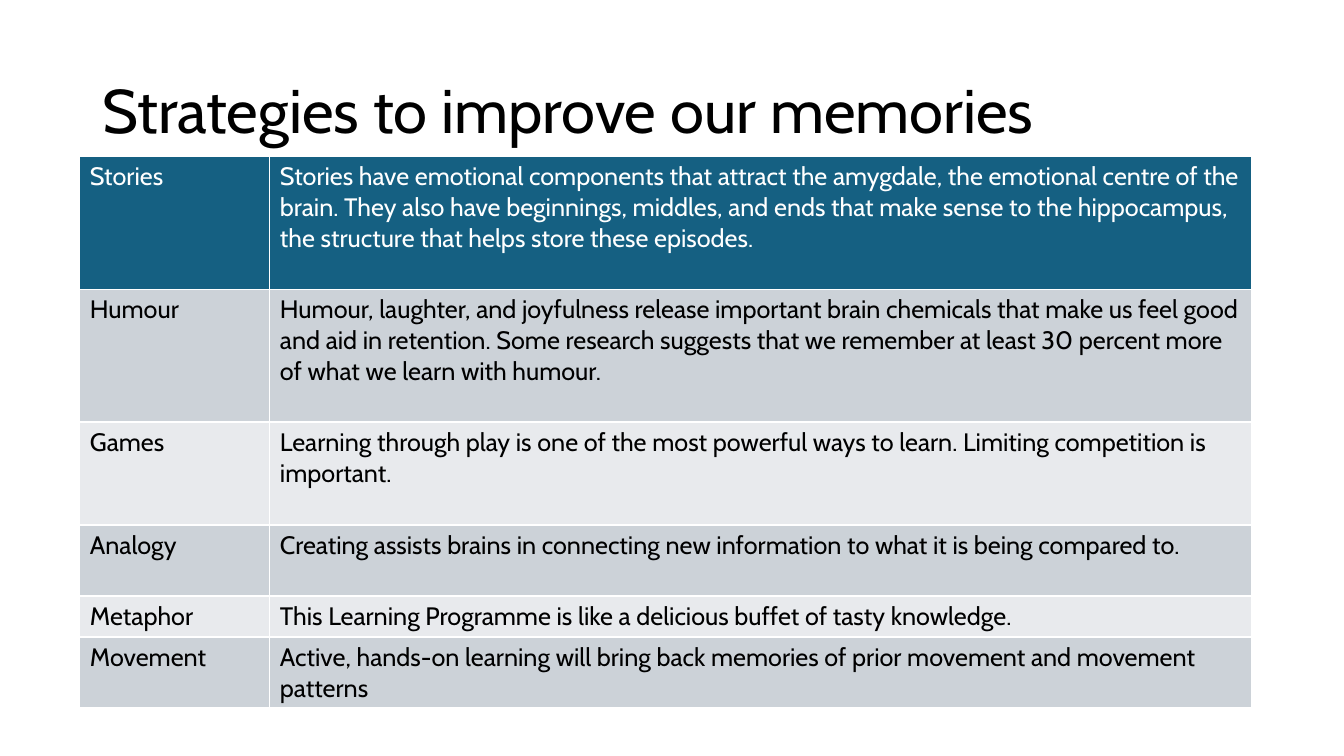
from lxml.etree import SubElement
from pptx import Presentation
from pptx.dml.color import RGBColor
from pptx.enum.text import MSO_ANCHOR
from pptx.oxml.ns import qn
from pptx.util import Pt

WHITE = RGBColor(0xFF, 0xFF, 0xFF)
BLACK = RGBColor(0x00, 0x00, 0x00)
HEADER_BLUE = RGBColor(0x15, 0x60, 0x82)
BAND_DARK = RGBColor(0xCC, 0xD2, 0xD8)
BAND_LIGHT = RGBColor(0xE8, 0xEA, 0xED)

# Strategy, explanation, row height in points
STRATEGIES = [
    ("Stories",
     "Stories have emotional components that attract the amygdale, the emotional "
     "centre of the brain. They also have beginnings, middles, and ends that make "
     "sense to the hippocampus, the structure that helps store these episodes.", 95),
    ("Humour",
     "Humour, laughter, and joyfulness release important brain chemicals that make "
     "us feel good and aid in retention. Some research suggests that we remember at "
     "least 30 percent more of what we learn with humour.", 94.6),
    ("Games",
     "Learning through play is one of the most powerful ways to learn. Limiting "
     "competition is important.", 73.6),
    ("Analogy",
     "Creating assists brains in connecting new information to what it is being "
     "compared to.", 50.8),
    ("Metaphor",
     "This Learning Programme is like a delicious buffet of tasty knowledge.", 29.2),
    ("Movement",
     "Active, hands-on learning will bring back memories of prior movement and "
     "movement patterns", 50.8),
]


class SlideBuilder:
    font_name = "Cabin"
    title_size = 44
    body_size = 18

    def __init__(self, slide):
        self.slide = slide

    def format_text(self, paragraph, size, color):
        for run in paragraph.runs:
            run.font.name = self.font_name
            run.font.size = Pt(size)
            run.font.color.rgb = color

    def add_title(self, text, left, top, width, height):
        shape = self.slide.shapes.add_textbox(Pt(left), Pt(top), Pt(width), Pt(height))
        text_frame = shape.text_frame
        text_frame.word_wrap = True
        text_frame.vertical_anchor = MSO_ANCHOR.MIDDLE
        text_frame.text = text
        paragraph = text_frame.paragraphs[0]
        paragraph.line_spacing = 0.9
        self.format_text(paragraph, self.title_size, BLACK)

    def add_borders(self, cell):
        properties = cell._tc.get_or_add_tcPr()
        # Borders must come before the fill in the cell properties
        for index, side in enumerate(("a:lnL", "a:lnR", "a:lnT", "a:lnB")):
            line = SubElement(properties, qn(side), w=str(Pt(1)))
            fill = SubElement(line, qn("a:solidFill"))
            SubElement(fill, qn("a:srgbClr"), val=str(WHITE))
            properties.insert(index, line)

    def fill_cell(self, cell, text, fill_color, text_color):
        cell.text_frame.text = text
        self.format_text(cell.text_frame.paragraphs[0], self.body_size, text_color)
        cell.fill.solid()
        cell.fill.fore_color.rgb = fill_color
        self.add_borders(cell)

    def add_strategy_table(self, strategies, left, top, column_widths):
        total_height = sum(height for _, _, height in strategies)
        table = self.slide.shapes.add_table(
            len(strategies), len(column_widths), Pt(left), Pt(top),
            Pt(sum(column_widths)), Pt(total_height)).table
        for column, width in zip(table.columns, column_widths):
            column.width = Pt(width)
        for index, (name, explanation, height) in enumerate(strategies):
            table.rows[index].height = Pt(height)
            if index == 0:
                colors = HEADER_BLUE, WHITE
            else:
                colors = (BAND_DARK if index % 2 else BAND_LIGHT), BLACK
            for cell, text in zip(table.rows[index].cells, (name, explanation)):
                self.fill_cell(cell, text, *colors)


def main():
    presentation = Presentation()
    presentation.slide_width = Pt(960)
    presentation.slide_height = Pt(540)
    builder = SlideBuilder(presentation.slides.add_slide(presentation.slide_layouts[6]))

    # Title
    builder.add_title("Strategies to improve our memories", 66, 28.8, 828, 104.4)

    # Table of strategies
    builder.add_strategy_table(STRATEGIES, 57, 111.8, (135.8, 701.2))

    presentation.save("out.pptx")


if __name__ == "__main__":
    main()
